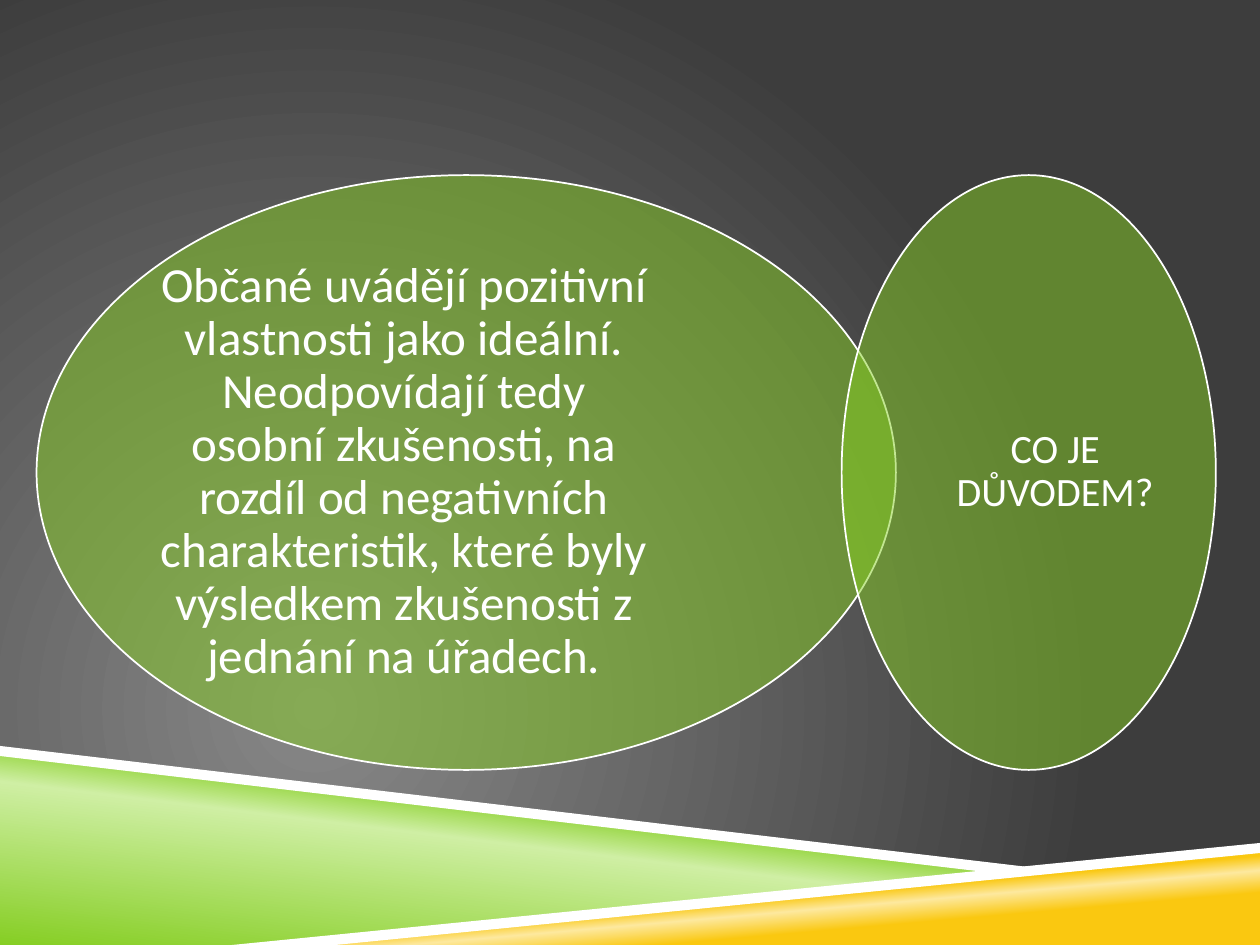
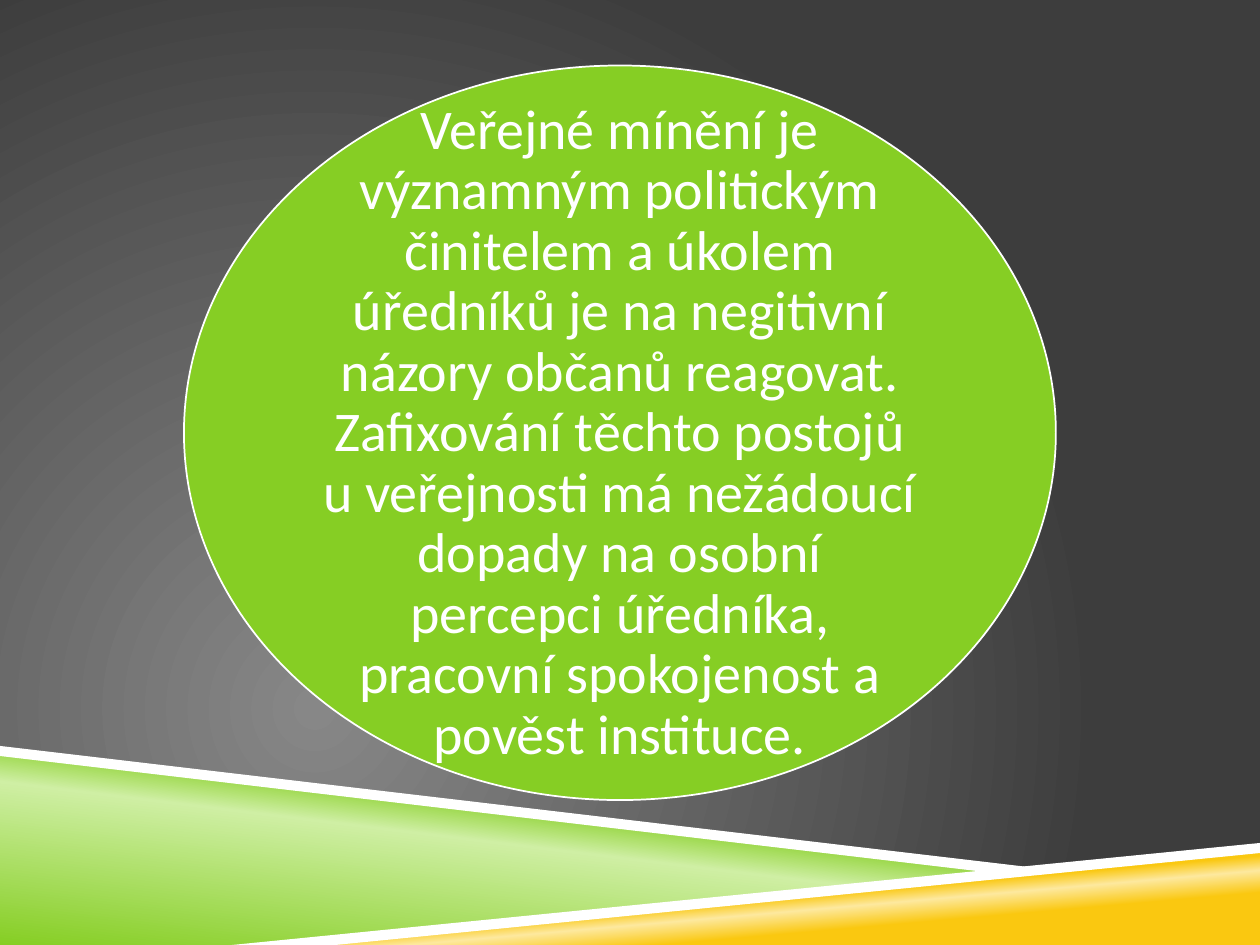
from dataclasses import dataclass

from lxml import etree
from pptx import Presentation
from pptx.dml.color import RGBColor
from pptx.enum.shapes import MSO_SHAPE
from pptx.enum.text import MSO_ANCHOR, PP_ALIGN
from pptx.oxml.ns import qn
from pptx.util import Inches, Pt

ELLIPSE = MSO_SHAPE.OVAL
MIDDLE = MSO_ANCHOR.MIDDLE
CENTER = PP_ALIGN.CENTER


@dataclass(frozen=True)
class Theme:
    """Colours, font and type sizes of the presentation."""
    green: str = "86CE24"
    pale_green: str = "CFEFA4"
    yellow: str = "FAC810"
    pale_yellow: str = "FDE99F"
    white: str = "FFFFFF"
    light_gray: str = "878787"
    dark_gray: str = "3D3D3D"
    font: str = "Calibri"
    statement_size: int = 32
    finding_size: int = 28
    question_size: int = 23
    line_spacing: float = 0.9
    outline_width: int = 1


class Deck:
    """Builds slides in one shared style."""

    def __init__(self, theme):
        """Start an empty 4:3 presentation."""
        self.theme = theme
        self.presentation = Presentation()
        self.presentation.slide_width = Inches(10)
        self.presentation.slide_height = Inches(7.5)
        self.slide = None

    def add_slide(self):
        """Add a slide with the shared background and bottom bands."""
        theme = self.theme
        layout = self.presentation.slide_layouts[6]
        self.slide = self.presentation.slides.add_slide(layout)
        self.slide.background.fill.gradient()
        gradient = self.set_stops(
            self.slide.element, [(0, theme.light_gray), (100, theme.dark_gray)])
        radial = etree.SubElement(gradient, qn("a:path"), path="circle")
        etree.SubElement(radial, qn("a:fillToRect"),
                         l="50000", t="100000", r="100000", b="50000")

        self.gradient_band(
            [(0, 5.97), (7.92, 6.92), (2, 7.5), (0, 7.5)],
            [(0, theme.green), (52, theme.pale_green), (66, theme.green)], 277)
        self.gradient_band(
            [(1.98, 7.5), (10, 6.72), (10, 7.5)],
            [(28, theme.yellow), (40, theme.pale_yellow), (48, theme.yellow)], 265)
        self.white_band([(0, 5.92), (0, 6), (7.9, 6.93), (8.32, 6.9)])
        self.white_band([(10, 6.69), (1.84, 7.5), (2.66, 7.5), (10, 6.77)])

    def set_stops(self, element, stops):
        """Replace the contents of a gradient with the given stops."""
        gradient = element.xpath(".//a:gradFill")[0]
        for child in list(gradient):
            gradient.remove(child)
        stop_list = etree.SubElement(gradient, qn("a:gsLst"))
        for position, color in stops:
            stop = etree.SubElement(stop_list, qn("a:gs"), pos=str(position * 1000))
            etree.SubElement(stop, qn("a:srgbClr"), val=color)
        return gradient

    def polygon(self, points):
        """Draw a closed outline without line or shadow."""
        corners = [(Inches(x), Inches(y)) for x, y in points]
        builder = self.slide.shapes.build_freeform(*corners[0])
        builder.add_line_segments(corners[1:], close=True)
        shape = builder.convert_to_shape()
        shape.shadow.inherit = False
        shape.line.fill.background()
        return shape

    def gradient_band(self, points, stops, angle):
        """Draw a band with a linear gradient."""
        shape = self.polygon(points)
        shape.fill.gradient()
        gradient = self.set_stops(shape.element, stops)
        etree.SubElement(gradient, qn("a:lin"), ang=str(angle * 60000), scaled="0")

    def white_band(self, points):
        """Draw a plain white band."""
        shape = self.polygon(points)
        shape.fill.solid()
        shape.fill.fore_color.rgb = RGBColor.from_string(self.theme.white)

    def ellipse(self, left, top, width, height, opacity=100):
        """Draw a green ellipse with a white outline."""
        shape = self.slide.shapes.add_shape(
            ELLIPSE, Inches(left), Inches(top), Inches(width), Inches(height))
        shape.shadow.inherit = False
        shape.fill.solid()
        shape.fill.fore_color.rgb = RGBColor.from_string(self.theme.green)
        shape.line.color.rgb = RGBColor.from_string(self.theme.white)
        shape.line.width = Pt(self.theme.outline_width)
        if opacity < 100:
            color = shape.element.xpath("./p:spPr/a:solidFill/a:srgbClr")[0]
            etree.SubElement(color, qn("a:alpha"), val=str(opacity * 1000))

    def text(self, left, top, width, height, wording, size, inset=0):
        """Place centred white text."""
        box = self.slide.shapes.add_textbox(
            Inches(left), Inches(top), Inches(width), Inches(height))
        frame = box.text_frame
        frame.word_wrap = True
        frame.vertical_anchor = MIDDLE
        frame.margin_left = frame.margin_right = Inches(inset)
        frame.margin_top = frame.margin_bottom = Inches(inset)
        paragraph = frame.paragraphs[0]
        paragraph.alignment = CENTER
        paragraph.line_spacing = self.theme.line_spacing
        run = paragraph.add_run()
        run.text = wording
        run.font.name = self.theme.font
        run.font.size = Pt(size)
        run.font.color.rgb = RGBColor.from_string(self.theme.white)


def add_reason_slide(deck):
    """Build the slide with two overlapping ellipses."""
    ellipse_top, ellipse_height = 1.39, 4.72
    text_top, text_height = 1.94, 3.61
    deck.add_slide()
    deck.ellipse(0.29, ellipse_top, 6.82, ellipse_height, opacity=50)
    deck.text(
        1.24, text_top, 3.93, text_height,
        "Občané uvádějí pozitivní vlastnosti jako ideální. Neodpovídají tedy "
        "osobní zkušenosti, na rozdíl od negativních charakteristik, které byly "
        "výsledkem zkušenosti z jednání na úřadech.",
        deck.theme.finding_size)
    deck.ellipse(6.68, ellipse_top, 2.97, ellipse_height, opacity=50)
    deck.text(7.52, text_top, 1.71, text_height, "CO JE DŮVODEM?",
              deck.theme.question_size)


def add_public_opinion_slide(deck):
    """Build the slide with one statement in an ellipse."""
    deck.add_slide()
    deck.ellipse(1.46, 0.52, 6.92, 5.83)
    deck.text(
        2.47, 1.38, 4.9, 4.12,
        "Veřejné mínění je významným politickým činitelem a úkolem úředníků je "
        "na negitivní názory občanů reagovat. Zafixování těchto postojů "
        "u veřejnosti má nežádoucí dopady na osobní percepci úředníka, "
        "pracovní spokojenost a pověst instituce.",
        deck.theme.statement_size, inset=0.04)


def main():
    """Build and save the presentation."""
    deck = Deck(Theme())
    add_reason_slide(deck)
    add_public_opinion_slide(deck)
    deck.presentation.save("out.pptx")


if __name__ == "__main__":
    main()
